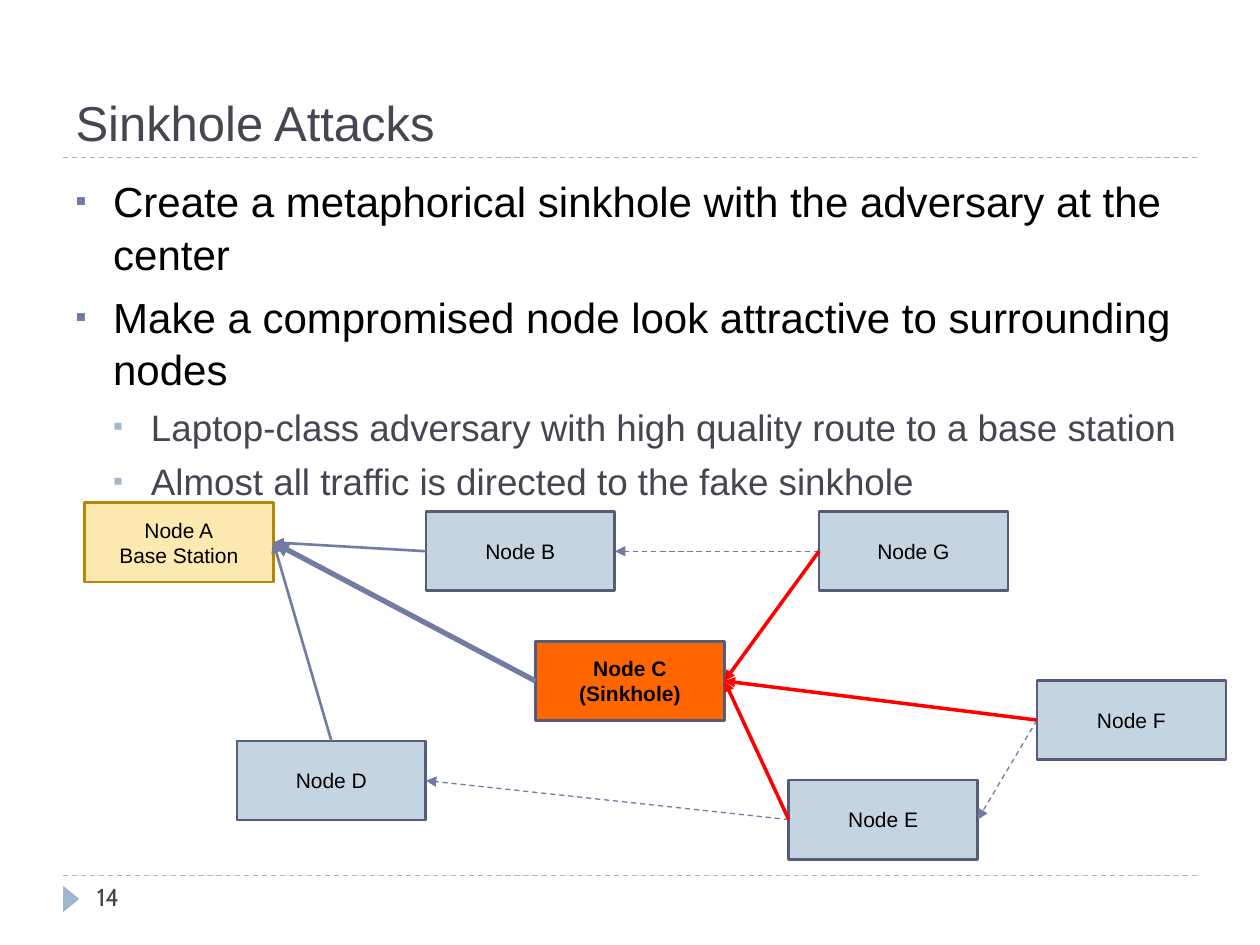
"""Build the Sinkhole Attacks slide with its routing diagram."""
from dataclasses import dataclass

from lxml import etree
from pptx import Presentation
from pptx.dml.color import RGBColor
from pptx.enum import dml, shapes, text
from pptx.oxml import ns
from pptx.util import Inches, Pt

BLACK = RGBColor(0x00, 0x00, 0x00)
SLATE = RGBColor(0x46, 0x46, 0x53)
INDIGO = RGBColor(0x72, 0x7C, 0xA3)
DARK_INDIGO = RGBColor(0x54, 0x5C, 0x79)
SKY = RGBColor(0x9F, 0xB8, 0xCD)
PALE_SKY = RGBColor(0xC5, 0xD4, 0xE1)
CREAM = RGBColor(0xFC, 0xE9, 0xAF)
GOLD = RGBColor(0xB3, 0x88, 0x07)
ORANGE = RGBColor(0xFF, 0x66, 0x00)
RED = RGBColor(0xFF, 0x00, 0x00)

FONT = "Arial"
NODE_WIDTH, NODE_HEIGHT = 1.5, 0.63
TOP, LEFT, RIGHT = 0, 1, 3


@dataclass(frozen=True)
class Level:
    size: float
    color: RGBColor
    bullet_color: RGBColor
    indent: float
    space_before: float


@dataclass(frozen=True)
class Node:
    label: str
    left: float
    top: float
    fill: RGBColor = PALE_SKY
    outline: RGBColor = DARK_INDIGO
    bold: bool = False


@dataclass(frozen=True)
class Route:
    source: str
    source_side: int
    target: str
    target_side: int = RIGHT
    color: RGBColor = INDIGO
    width: float = 1.5
    dashed: bool = False


POINT = Level(24, BLACK, INDIGO, 0.3, 6)
SUBPOINT = Level(21, SLATE, SKY, 0.6, 5)
BULLETS = [
    (POINT, "Create a metaphorical sinkhole with the adversary at the center"),
    (POINT, "Make a compromised node look attractive to surrounding nodes"),
    (SUBPOINT, "Laptop-class adversary with high quality route to a base station"),
    (SUBPOINT, "Almost all traffic is directed to the fake sinkhole"),
]
NODES = {
    "A": Node("Node A\vBase Station", 0.67, 3.99, CREAM, GOLD),
    "B": Node("Node B", 3.38, 4.06),
    "D": Node("Node D", 1.88, 5.88),
    "C": Node("Node C\n(Sinkhole)", 4.25, 5.09, ORANGE, bold=True),
    "G": Node("Node G", 6.5, 4.06),
    "E": Node("Node E", 6.26, 6.19),
    "F": Node("Node F", 8.23, 5.4),
}
ROUTES = [
    Route("B", LEFT, "A"),
    Route("D", TOP, "A"),
    Route("C", LEFT, "A", width=3),
    Route("G", LEFT, "B", width=0.75, dashed=True),
    Route("E", LEFT, "D", width=0.75, dashed=True),
    Route("F", LEFT, "E", width=0.75, dashed=True),
    *(Route(source, LEFT, "C", color=RED, width=2) for source in "GEF"),
]


def style_font(font, size: float, color: RGBColor, name: str = FONT) -> None:
    font.name, font.size = name, Pt(size)
    font.color.rgb = color


def add_line(slide, color: RGBColor, width: float, dashed: bool, y: float = 0):
    line = slide.shapes.add_connector(
        shapes.MSO_CONNECTOR.STRAIGHT, Inches(0.5), Inches(y), Inches(9.5), Inches(y))
    line.line.color.rgb, line.line.width = color, Pt(width)
    if dashed:
        line.line.dash_style = dml.MSO_LINE.DASH
    etree.SubElement(line._element.spPr, ns.qn("a:effectLst"))
    return line


def add_title(slide) -> None:
    title = slide.shapes.title
    title.left, title.top = Inches(0.5), Inches(0.17)
    title.width, title.height = Inches(9), Inches(1.08)
    frame = title.text_frame
    frame.text = "Sinkhole Attacks"
    frame.vertical_anchor = text.MSO_ANCHOR.BOTTOM
    paragraph = frame.paragraphs[0]
    paragraph.alignment = text.PP_ALIGN.LEFT
    style_font(paragraph.font, 28, SLATE)


def format_bullet(paragraph, level: Level) -> None:
    paragraph.space_before = Pt(level.space_before)
    paragraph.line_spacing = 1.04
    style_font(paragraph.font, level.size, level.color)
    properties = paragraph._p.get_or_add_pPr()
    properties.set("marL", str(Inches(level.indent)))
    properties.set("indent", str(Inches(-0.3)))
    bullet = etree.fromstring(
        f'<a:pPr {ns.nsdecls("a")}>'
        f'<a:buClr><a:srgbClr val="{level.bullet_color}"/></a:buClr>'
        f'<a:buSzPct val="76000"/><a:buFont typeface="{FONT}"/><a:buChar char="▪"/></a:pPr>')
    defaults = properties.find(ns.qn("a:defRPr"))
    for part in list(bullet):
        defaults.addprevious(part)


def add_bullets(slide) -> None:
    body = slide.shapes.add_textbox(Inches(0.5), Inches(1.33), Inches(9), Inches(5.4))
    frame = body.text_frame
    frame.word_wrap = True
    frame.text = "\n".join(wording for _, wording in BULLETS)
    for paragraph, (level, _) in zip(frame.paragraphs, BULLETS):
        format_bullet(paragraph, level)


def add_node(slide, node: Node):
    box = slide.shapes.add_shape(
        shapes.MSO_SHAPE.RECTANGLE, Inches(node.left), Inches(node.top),
        Inches(NODE_WIDTH), Inches(NODE_HEIGHT))
    box.shadow.inherit = False
    box.fill.solid()
    box.fill.fore_color.rgb = node.fill
    box.line.color.rgb, box.line.width = node.outline, Pt(1.5)
    box.text_frame.text = node.label
    box.text_frame.vertical_anchor = text.MSO_ANCHOR.MIDDLE
    for paragraph in box.text_frame.paragraphs:
        paragraph.alignment = text.PP_ALIGN.CENTER
        style_font(paragraph.font, 12, BLACK)
        paragraph.font.bold = node.bold
    return box


def add_route(slide, route: Route, boxes: dict) -> None:
    arrow = add_line(slide, route.color, route.width, route.dashed)
    arrow.begin_connect(boxes[route.source], route.source_side)
    arrow.end_connect(boxes[route.target], route.target_side)
    etree.SubElement(arrow.line._get_or_add_ln(), ns.qn("a:tailEnd"), type="triangle")


def add_footer(slide) -> None:
    marker = slide.shapes.add_shape(
        shapes.MSO_SHAPE.ISOSCELES_TRIANGLE, Inches(0.46), Inches(7.07),
        Inches(0.21), Inches(0.13))
    marker.rotation = 90
    marker.shadow.inherit = False
    marker.fill.solid()
    marker.fill.fore_color.rgb = SKY
    marker.line.fill.background()
    number = slide.shapes.add_textbox(Inches(0.67), Inches(6.95), Inches(2.17), Inches(0.4))
    number.text_frame.word_wrap = True
    number.text_frame.text = "14"
    style_font(number.text_frame.paragraphs[0].font, 14, SLATE, "Cabin")


def main() -> None:
    deck = Presentation()
    deck.slide_width, deck.slide_height = Inches(10), Inches(7.5)
    slide = deck.slides.add_slide(deck.slide_layouts[5])
    for y in (6.95, 1.25):
        add_line(slide, SKY, 0.75, True, y)
    add_title(slide)
    add_footer(slide)
    add_bullets(slide)
    boxes = {key: add_node(slide, node) for key, node in NODES.items()}
    for route in ROUTES:
        add_route(slide, route, boxes)
    deck.save("out.pptx")


if __name__ == "__main__":
    main()
